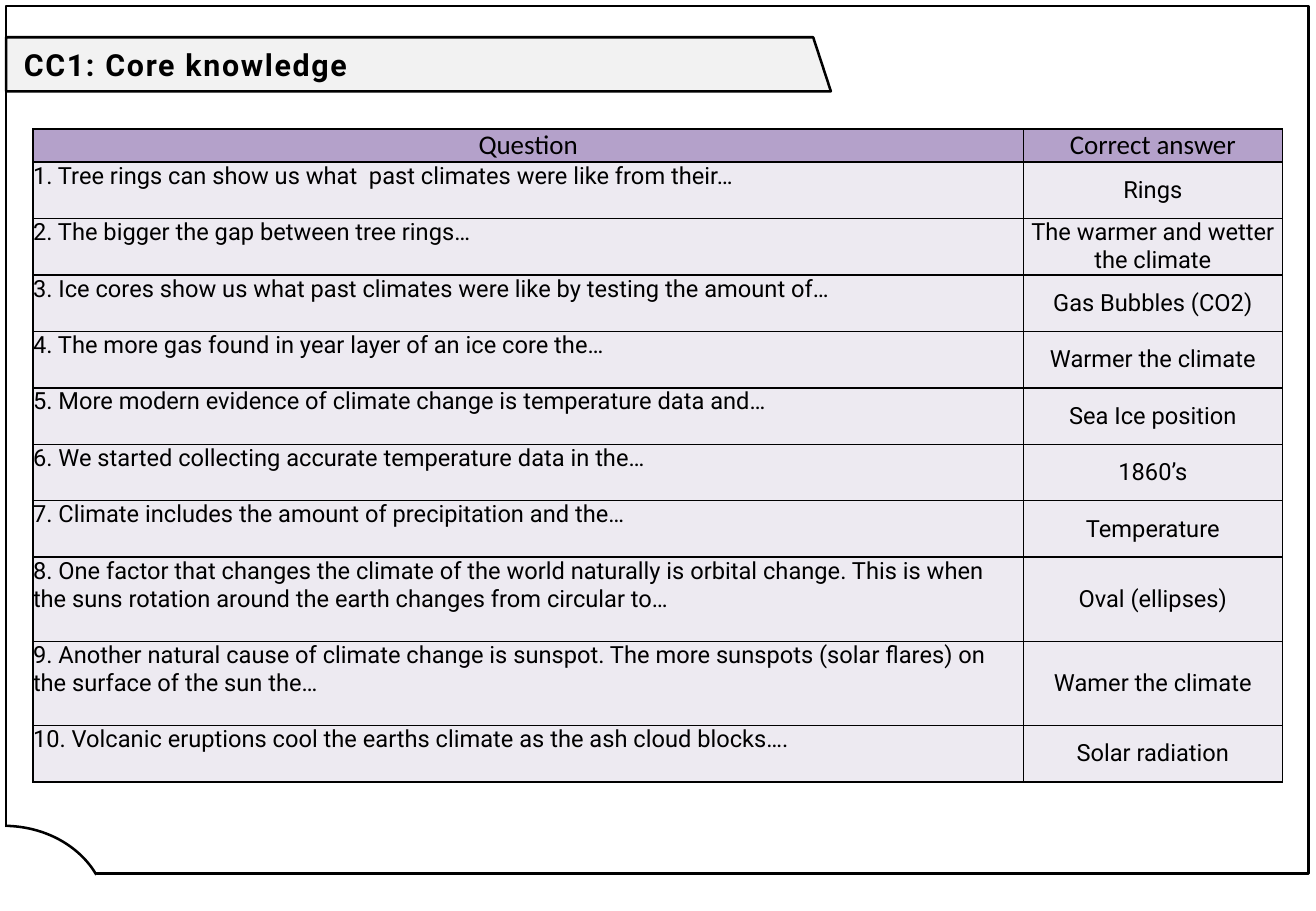
import pptx
import pptx.util
import pptx.dml.color
import pptx.enum.shapes
import pptx.enum.text
import pptx.oxml
from pptx.util import Cm, Pt

TITLE = "CC1: Core knowledge"
HEADER = ("Question", "Correct answer")
ROWS = [
    ("1. Tree rings can show us what  past climates were like from their…", "Rings"),
    ("2. The bigger the gap between tree rings…", "The warmer and wetter the climate"),
    ("3. Ice cores show us what past climates were like by testing the amount of…",
     "Gas Bubbles (CO2)"),
    ("4. The more gas found in year layer of an ice core the…", "Warmer the climate"),
    ("5. More modern evidence of climate change is temperature data and…",
     "Sea Ice position"),
    ("6. We started collecting accurate temperature data in the…", "1860’s"),
    ("7. Climate includes the amount of precipitation and the…", "Temperature"),
    ("8. One factor that changes the climate of the world naturally is orbital change. "
     "This is when the suns rotation around the earth changes from circular to…",
     "Oval (ellipses)"),
    ("9. Another natural cause of climate change is sunspot. The more sunspots "
     "(solar flares) on the surface of the sun the…", "Wamer the climate"),
    ("10. Volcanic eruptions cool the earths climate as the ash cloud blocks….",
     "Solar radiation"),
]
COLORS = {"black": "000000", "white": "FFFFFF", "banner": "F2F2F2",
          "header": "B4A1CA", "body": "EDEAF1"}
COL_WIDTHS = (20.7, 5.42)
HEADER_H, SHORT_H, LONG_H = 0.69, 1.18, 1.76
LONG_QUESTION = 80

SHAPE = pptx.enum.shapes.MSO_SHAPE
ANCHOR = pptx.enum.text.MSO_ANCHOR
ALIGN = pptx.enum.text.PP_ALIGN


def rgb(name):
    return pptx.dml.color.RGBColor.from_string(COLORS[name])


def add_text(tf, text, size=14, font="Roboto", bold=False, align=ALIGN.LEFT, spacing=None):
    tf.word_wrap = True
    p = tf.paragraphs[0]
    p.alignment = align
    r = p.add_run()
    r.text = text
    r.font.size = Pt(size)
    r.font.name = font
    r.font.bold = bold
    r.font.color.rgb = rgb("black")
    if spacing:
        r.font._element.set("spc", str(spacing * 100))
    return p


def style(s, fill=None, line=True):
    s.shadow.inherit = False
    if fill:
        s.fill.solid()
        s.fill.fore_color.rgb = rgb(fill)
    else:
        s.fill.background()
    if line:
        s.line.color.rgb = rgb("black")
        s.line.width = Pt(1.5)
    else:
        s.line.fill.background()


def add_box(shapes, kind, left, top, width, height, **look):
    s = shapes.add_shape(kind, Cm(left), Cm(top), Cm(width), Cm(height))
    style(s, **look)
    return s


def add_banner(shapes):
    points = [(Cm(x), Cm(y)) for x, y in
              ((0.13, 0.78), (17, 0.78), (17.37, 1.91), (0.13, 1.91))]
    builder = shapes.build_freeform(*points[0])
    builder.add_line_segments(points[1:], close=True)
    style(builder.convert_to_shape(), fill="banner")


def format_cell(cell, fill, anchor):
    cell.margin_left = cell.margin_right = cell.margin_top = cell.margin_bottom = 0
    cell.vertical_anchor = anchor
    tcPr = cell._tc.get_or_add_tcPr()
    for side in "LRTB":
        tcPr.append(pptx.oxml.parse_xml(
            f'<a:ln{side} xmlns:a="http://schemas.openxmlformats.org/drawingml/2006/main" '
            f'w="{Pt(1)}"><a:solidFill><a:srgbClr val="{COLORS["black"]}"/>'
            f'</a:solidFill></a:ln{side}>'))
    cell.fill.solid()
    cell.fill.fore_color.rgb = rgb(fill)


def add_quiz(shapes):
    heights = [HEADER_H] + [LONG_H if len(q) > LONG_QUESTION else SHORT_H for q, _ in ROWS]
    table = shapes.add_table(len(heights), len(COL_WIDTHS), Cm(0.69), Cm(2.7),
                             Cm(sum(COL_WIDTHS)), Cm(sum(heights))).table
    table.horz_banding = False
    for column, width in zip(table.columns, COL_WIDTHS):
        column.width = Cm(width)
    for i, (texts, height) in enumerate(zip([HEADER] + ROWS, heights)):
        table.rows[i].height = Cm(height)
        for j, text in enumerate(texts):
            cell = table.cell(i, j)
            question = i > 0 and j == 0
            format_cell(cell, "body" if i else "header",
                        ANCHOR.TOP if question else ANCHOR.MIDDLE)
            add_text(cell.text_frame, text, size=14 if i else 16,
                     font="Roboto" if i else "Calibri",
                     align=ALIGN.LEFT if question else ALIGN.CENTER)


def add_title(shapes):
    s = shapes.add_textbox(Cm(0.25), Cm(0.53), Cm(16.33), Cm(1.6))
    s.text_frame.vertical_anchor = ANCHOR.MIDDLE
    p = add_text(s.text_frame, TITLE, size=18, bold=True, spacing=1)
    p.line_spacing = 1.07
    p.space_after = Pt(8)


def main():
    prs = pptx.Presentation()
    prs.slide_width, prs.slide_height = Cm(27.51), Cm(19.05)
    shapes = prs.slides.add_slide(prs.slide_layouts[6]).shapes
    add_banner(shapes)
    add_box(shapes, SHAPE.RECTANGLE, 0.13, 0.13, 27.23, 18.14)
    arc = add_box(shapes, SHAPE.ARC, -2.08, 17.27, 4.32, 3.68, fill="white")
    arc.adjustments[0], arc.adjustments[1] = 162.53, 202.27
    add_box(shapes, SHAPE.RECTANGLE, 0.03, 17.3, 0.13, 0.25, fill="white", line=False)
    add_quiz(shapes)
    add_title(shapes)
    prs.save("out.pptx")


if __name__ == "__main__":
    main()
